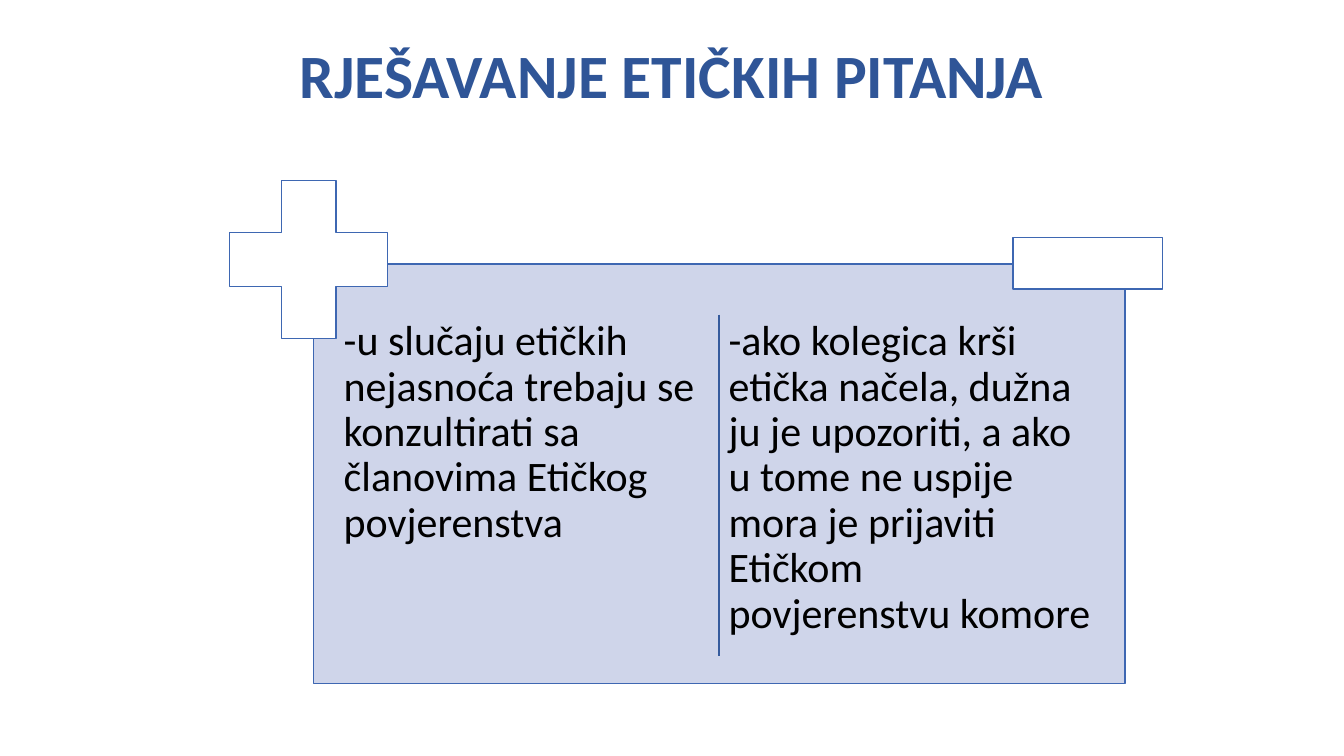
from lxml.etree import SubElement
from pptx import Presentation
from pptx.dml.color import RGBColor
from pptx.enum.shapes import MSO_CONNECTOR, MSO_SHAPE
from pptx.enum.text import MSO_ANCHOR, PP_ALIGN
from pptx.oxml.ns import qn
from pptx.util import Pt

TITLE_BLUE = RGBColor(0x2F, 0x55, 0x97)
OUTLINE_BLUE = RGBColor(0x3E, 0x67, 0xB2)
DIVIDER_BLUE = RGBColor(0x36, 0x5B, 0x9D)
PANEL_BLUE = RGBColor(0xCF, 0xD5, 0xEA)
WHITE = RGBColor(0xFF, 0xFF, 0xFF)
BLACK = RGBColor(0, 0, 0)

CONSULT = ("-u slučaju etičkih nejasnoća trebaju se konzultirati sa "
           "članovima Etičkog povjerenstva")
REPORT = ("-ako kolegica krši etička načela, dužna ju je upozoriti, a ako "
          "u tome ne uspije mora je prijaviti Etičkom povjerenstvu komore")


def write(frame, text, size, color, bold=False, align=PP_ALIGN.LEFT, inset=None):
    frame.word_wrap = True
    frame.vertical_anchor = MSO_ANCHOR.TOP
    if inset is not None:
        frame.margin_left = frame.margin_right = Pt(inset)
        frame.margin_top = frame.margin_bottom = Pt(inset)
    paragraph = frame.paragraphs[0]
    paragraph.alignment = align
    paragraph.line_spacing = 0.9
    run = paragraph.add_run()
    run.text = text
    run.font.name = "Calibri"
    run.font.size = Pt(size)
    run.font.bold = bold
    run.font.color.rgb = color


def add_outlined(shapes, preset, left, top, width, height, fill):
    shape = shapes.add_shape(preset, Pt(left), Pt(top), Pt(width), Pt(height))
    shape.shadow.inherit = False
    shape.fill.solid()
    shape.fill.fore_color.rgb = fill
    shape.line.color.rgb = OUTLINE_BLUE
    shape.line.width = Pt(1)
    return shape


def add_divider(shapes, x, top, bottom):
    divider = shapes.add_connector(
        MSO_CONNECTOR.STRAIGHT, Pt(x), Pt(top), Pt(x), Pt(bottom))
    divider.line.color.rgb = DIVIDER_BLUE
    divider.line.width = Pt(1)
    SubElement(divider._element.spPr, qn("a:effectLst"))


def add_title(slide, left, top, width, height):
    title = slide.shapes.title
    title.left, title.top = Pt(left), Pt(top)
    title.width, title.height = Pt(width), Pt(height)
    write(title.text_frame, "RJEŠAVANJE ETIČKIH PITANJA", 44, TITLE_BLUE,
          bold=True, align=PP_ALIGN.CENTER)


def add_plus_minus(slide, left, top, width, height):
    """Panel with two columns of text, a plus and a minus on its top corners."""
    shapes = slide.shapes.add_group_shape().shapes
    add_outlined(shapes, MSO_SHAPE.RECTANGLE, left, top, width, height, PANEL_BLUE)

    column_width, column_step = 269.3, 275
    for column, text in enumerate((CONSULT, REPORT)):
        box = shapes.add_textbox(
            Pt(left + 17.3 + column * column_step), Pt(top + 35.3),
            Pt(column_width), Pt(256.3))
        write(box.text_frame, text, 30, BLACK, inset=4.3)

    plus = add_outlined(shapes, MSO_SHAPE.CROSS, left - 59.9, top - 59.8,
                        113, 113, WHITE)
    plus.adjustments[0] = 0.328
    add_outlined(shapes, MSO_SHAPE.RECTANGLE, left + width - 79.9, top - 19,
                 106.6, 36.7, WHITE)
    add_divider(shapes, left + width / 2, top + 36, top + 280)


def main():
    presentation = Presentation()
    presentation.slide_width, presentation.slide_height = Pt(960), Pt(540)
    slide = presentation.slides.add_slide(presentation.slide_layouts[5])
    add_title(slide, 66, 28.8, 828, 104.4)
    add_plus_minus(slide, 223.9, 188.7, 579.6, 299.5)
    presentation.save("out.pptx")


if __name__ == "__main__":
    main()
